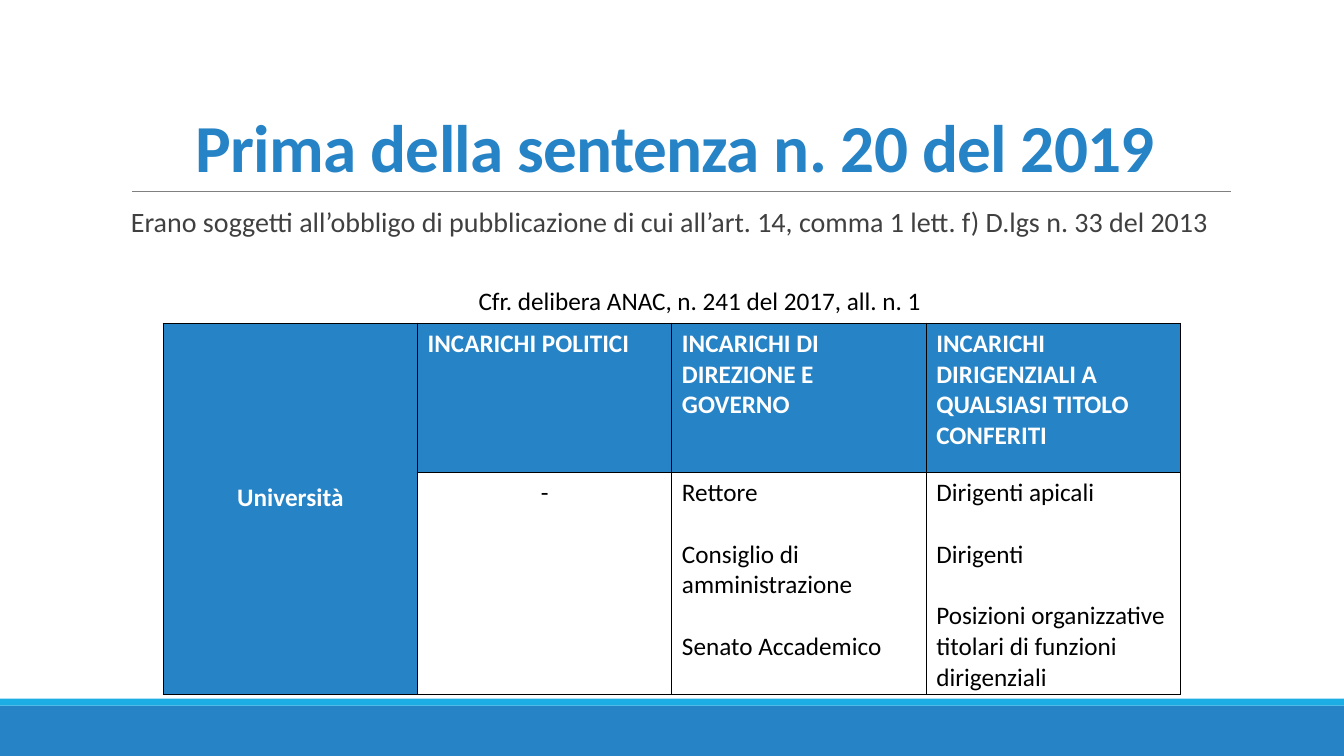
from lxml import etree
from pptx import Presentation
from pptx.dml.color import RGBColor
from pptx.enum.shapes import MSO_CONNECTOR, MSO_SHAPE
from pptx.enum.text import MSO_ANCHOR, PP_ALIGN
from pptx.oxml.ns import qn
from pptx.util import Pt

LEFT, CENTER = PP_ALIGN.LEFT, PP_ALIGN.CENTER
TOP, MIDDLE, BOTTOM = MSO_ANCHOR.TOP, MSO_ANCHOR.MIDDLE, MSO_ANCHOR.BOTTOM
COLORS = {"blue": "2683C6", "cyan": "1CADE4", "gray": "808080",
          "dark": "404040", "black": "000000", "white": "FFFFFF"}
FONT = "Calibri"


def color(name):
    return RGBColor.from_string(COLORS[name])


def write(frame, *lines, size=18, ink="black", bold=False, align=LEFT,
          line_spacing=None, gap=0, tracking=None):
    """Fill a text frame with one paragraph per line, gap points apart."""
    for index, text in enumerate(lines):
        para = frame.paragraphs[0] if index == 0 else frame.add_paragraph()
        para.alignment = align
        if line_spacing:
            para.line_spacing = line_spacing
        if index:
            para.space_before = Pt(gap)
        span = para.add_run()
        span.text = text
        span.font.name = FONT
        span.font.size = Pt(size)
        span.font.bold = bold
        span.font.color.rgb = color(ink)
        if tracking is not None:
            span.font._element.set("spc", str(int(tracking * 100)))


deck = Presentation()
deck.slide_width, deck.slide_height = Pt(960), Pt(540)
page = deck.slides.add_slide(deck.slide_layouts[6])

# Footer bands
for top, height, fill in ((504, 36, "blue"), (499, 5, "cyan")):
    band = page.shapes.add_shape(MSO_SHAPE.RECTANGLE, 0, Pt(top), Pt(960), Pt(height))
    band.shadow.inherit = False
    band.fill.solid()
    band.fill.fore_color.rgb = color(fill)
    band.line.fill.background()

# Rule under the title
rule = page.shapes.add_connector(MSO_CONNECTOR.STRAIGHT, Pt(94.3), Pt(136.7), Pt(879), Pt(136.7))
rule.line.color.rgb = color("gray")
rule.line.width = Pt(0.5)
etree.SubElement(rule._element.spPr, qn("a:effectLst"))

# Title
title = page.shapes.add_textbox(Pt(86.4), Pt(22.4), Pt(792), Pt(114.3)).text_frame
title.word_wrap = True
title.vertical_anchor = BOTTOM
write(title, "Prima della sentenza n. 20 del 2019", size=48, ink="blue", bold=True,
      align=CENTER, line_spacing=0.85, tracking=-0.5)

# Introduction
intro = page.shapes.add_textbox(Pt(86.4), Pt(145.4), Pt(792), Pt(316.8)).text_frame
intro.word_wrap = True
intro.margin_left, intro.margin_right = Pt(7.2), 0
write(intro, "Erano soggetti all’obbligo di pubblicazione di cui all’art. 14, "
      "comma 1 lett. f) D.lgs n. 33 del 2013", size=20, ink="dark", line_spacing=0.9)

# Table caption
caption = page.shapes.add_textbox(Pt(331), Pt(200), Pt(337.7), Pt(29)).text_frame
caption.word_wrap = False
write(caption, "Cfr. delibera ANAC, n. 241 del 2017, all. n. 1", align=CENTER)

# Table of offices
offices = page.shapes.add_table(2, 4, Pt(116.6), Pt(230.9), Pt(726.8), Pt(265)).table
for column in offices.columns:
    column.width = Pt(181.7)
offices.rows[0].height, offices.rows[1].height = Pt(106.6), Pt(158.4)
offices.cell(0, 0).merge(offices.cell(1, 0))

contents = [
    [["Università"], ["INCARICHI POLITICI"], ["INCARICHI DI DIREZIONE E GOVERNO"],
     ["INCARICHI DIRIGENZIALI A QUALSIASI TITOLO CONFERITI"]],
    [[], ["-"], ["Rettore", "Consiglio di amministrazione", "Senato Accademico"],
     ["Dirigenti apicali", "Dirigenti",
      "Posizioni organizzative titolari di funzioni dirigenziali"]],
]
for row, texts in enumerate(contents):
    for col, lines in enumerate(texts):
        cell = offices.cell(row, col)
        header = row == 0 or col == 0
        side_label = col == 0
        cell.vertical_anchor = MIDDLE if side_label else TOP
        cell.margin_bottom = Pt(19.4 if side_label else 0)
        write(cell.text_frame, *lines, bold=header, ink="white" if header else "black",
              align=CENTER if side_label or lines == ["-"] else LEFT, gap=22)
        # Borders precede the fill in the cell properties
        properties = cell._tc.get_or_add_tcPr()
        for side in ("a:lnL", "a:lnR", "a:lnT", "a:lnB"):
            border = etree.SubElement(properties, qn(side), w=str(Pt(1)))
            paint = etree.SubElement(border, qn("a:solidFill"))
            etree.SubElement(paint, qn("a:srgbClr"), val=COLORS["black"])
        cell.fill.solid()
        cell.fill.fore_color.rgb = color("blue" if header else "white")

deck.save("out.pptx")
